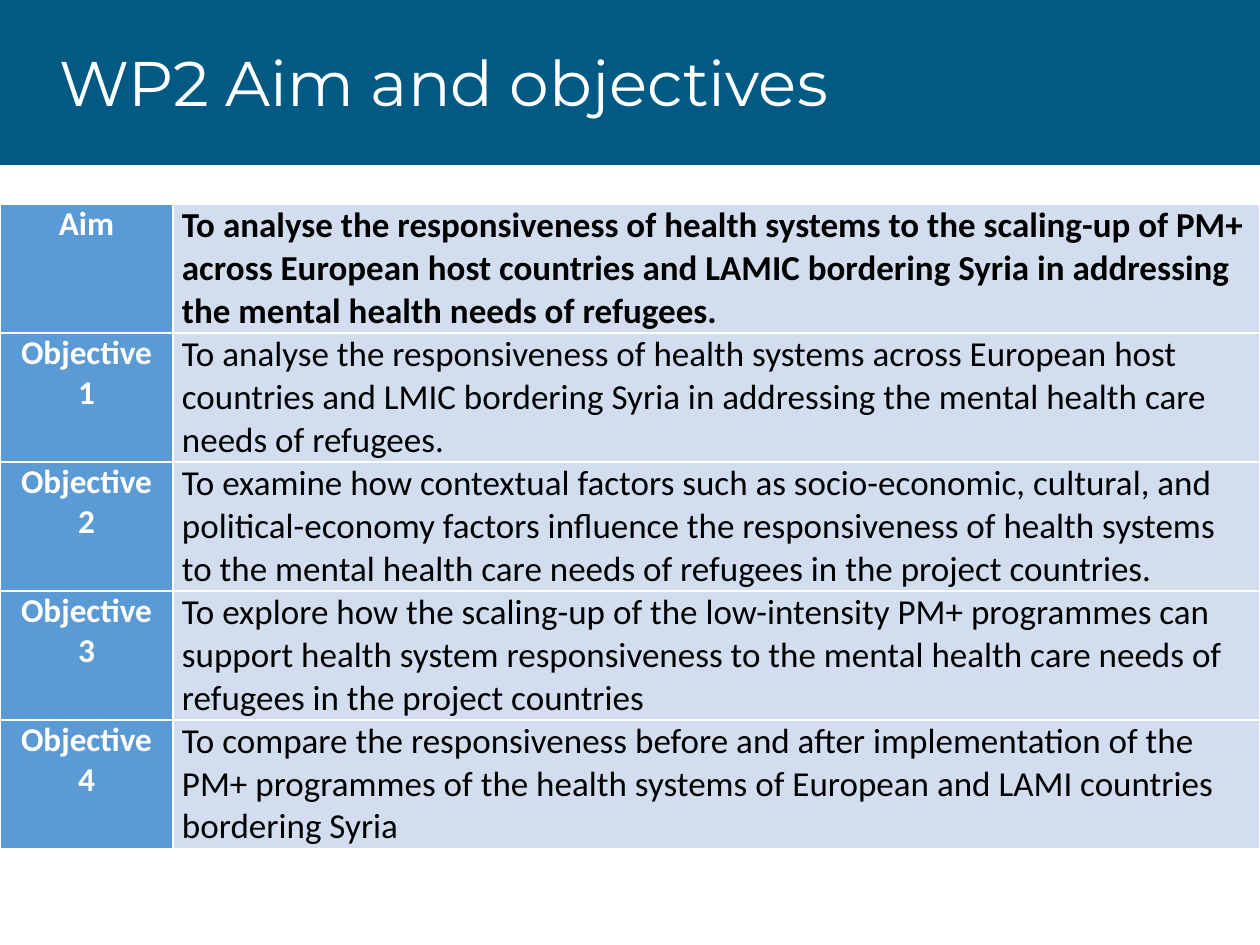
"""Build the WP2 aim and objectives slide."""
import pptx
import pptx.dml.color
import pptx.enum.shapes
import pptx.enum.text
import pptx.oxml
import pptx.oxml.ns
import pptx.util

TITLE = "WP2 Aim and objectives"
GOALS = [
    ("Aim", "To analyse the responsiveness of health systems to the scaling-up of PM+ across European host "
            "countries and LAMIC bordering Syria in addressing the mental health needs of refugees."),
    ("Objective 1", "To analyse the responsiveness of health systems across European host countries and LMIC "
                    "bordering Syria in addressing the mental health care needs of refugees."),
    ("Objective 2", "To examine how contextual factors such as socio-economic, cultural, and political-economy "
                    "factors influence the responsiveness of health systems to the mental health care needs of "
                    "refugees in the project countries."),
    ("Objective 3", "To explore how the scaling-up of the low-intensity PM+ programmes can support health system "
                    "responsiveness to the mental health care needs of refugees in the project countries"),
    ("Objective 4", "To compare the responsiveness before and after implementation of the PM+ programmes of the "
                    "health systems of European and LAMI countries bordering Syria"),
]

PX = 914400 // 126
WIDTH, HEIGHT = 1260, 945
BANNER = (0, 0, WIDTH, 165)
TITLE_BOX = (47, 19, 903, 134)
TABLE_TOP, ROW_HEIGHT = 204, 129
COLUMNS = (173, 1087)
CELL_MARGINS = {"margin_left": 9 * PX, "margin_right": 9 * PX, "margin_top": 0, "margin_bottom": 0}

ALIGN = pptx.enum.text.PP_ALIGN
TITLE_FORMAT = {"name": "Montserrat", "size": pptx.util.Pt(36), "bold": False}
LABEL_FORMAT = {"name": "Calibri", "size": pptx.util.Pt(19), "bold": True}
GOAL_FORMAT = {"name": "Calibri", "size": pptx.util.Pt(20), "bold": False}


def px(*lengths):
    return [length * PX for length in lengths]


def color(value):
    return pptx.dml.color.RGBColor.from_string(value)


def paint(fill, value):
    fill.solid()
    fill.fore_color.rgb = color(value)


def assign(target, values):
    for key, value in values.items():
        setattr(target, key, value)


def write(frame, text, font_format, ink, align=ALIGN.LEFT):
    paragraph = frame.paragraphs[0]
    paragraph.alignment = align
    run = paragraph.add_run()
    run.text = text
    assign(run.font, font_format)
    run.font.color.rgb = color(ink)
    return paragraph


def add_borders(cell):
    properties = cell._tc.get_or_add_tcPr()
    for side in ("lnL", "lnR", "lnT", "lnB"):
        properties.append(pptx.oxml.parse_xml(
            f'<a:{side} {pptx.oxml.ns.nsdecls("a")} w="12700"><a:solidFill>'
            f'<a:srgbClr val="FFFFFF"/></a:solidFill></a:{side}>'))


def fill_cell(cell, text, font_format, ink, background, align):
    assign(cell, CELL_MARGINS)
    add_borders(cell)
    paint(cell.fill, background)
    write(cell.text_frame, text, font_format, ink, align)


def add_heading(slide):
    banner = slide.shapes.add_shape(pptx.enum.shapes.MSO_SHAPE.RECTANGLE, *px(*BANNER))
    banner.shadow.inherit = False
    paint(banner.fill, "015A84")
    banner.line.fill.background()
    frame = slide.shapes.add_textbox(*px(*TITLE_BOX)).text_frame
    assign(frame, {"word_wrap": True, "vertical_anchor": pptx.enum.text.MSO_ANCHOR.MIDDLE})
    write(frame, TITLE, TITLE_FORMAT, "FFFFFF").line_spacing = 0.9


def add_goals(slide):
    box = px(0, TABLE_TOP, WIDTH, ROW_HEIGHT * len(GOALS))
    goals = slide.shapes.add_table(len(GOALS), len(COLUMNS), *box).table
    for column, width in zip(goals.columns, COLUMNS):
        column.width = width * PX
    for index, (label, goal) in enumerate(GOALS):
        goals.rows[index].height = ROW_HEIGHT * PX
        goal_format = GOAL_FORMAT | {"bold": index == 0}
        fill_cell(goals.cell(index, 0), label, LABEL_FORMAT, "FFFFFF", "5B9BD5", ALIGN.CENTER)
        fill_cell(goals.cell(index, 1), goal, goal_format, "000000", "D2DEEF", ALIGN.LEFT)


def main():
    deck = pptx.Presentation()
    deck.slide_width, deck.slide_height = px(WIDTH, HEIGHT)
    slide = deck.slides.add_slide(deck.slide_layouts[6])
    add_heading(slide)
    add_goals(slide)
    deck.save("out.pptx")


if __name__ == "__main__":
    main()
